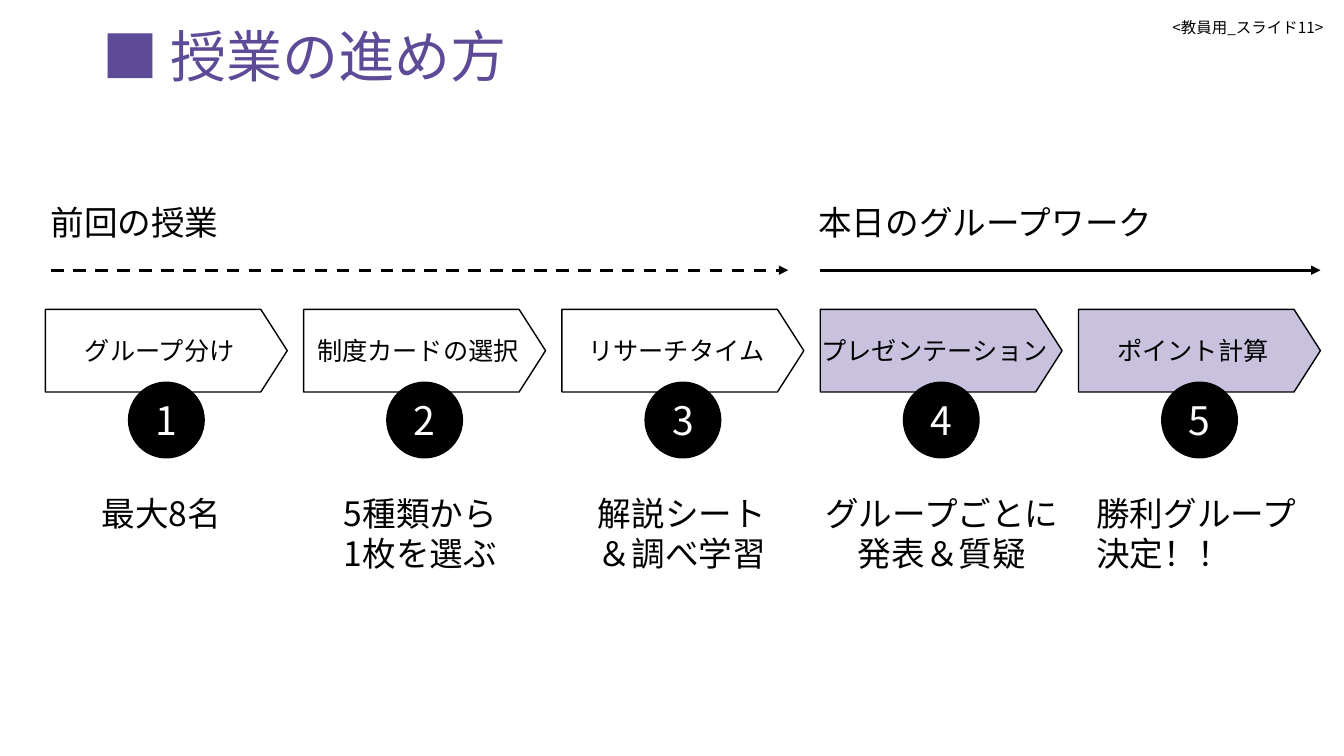
from lxml.etree import SubElement
from pptx import Presentation
from pptx.dml.color import RGBColor
from pptx.enum.dml import MSO_LINE
from pptx.enum.shapes import MSO_CONNECTOR, MSO_SHAPE
from pptx.enum.text import MSO_ANCHOR, MSO_AUTO_SIZE, PP_ALIGN
from pptx.oxml.ns import qn
from pptx.util import Pt

BLACK = RGBColor(0x00, 0x00, 0x00)
WHITE = RGBColor(0xFF, 0xFF, 0xFF)
PURPLE = RGBColor(0x5E, 0x4B, 0x97)
LILAC = RGBColor(0xC9, 0xC2, 0xDE)

FIRST_LEFT, STEP_PITCH = 32.4, 184.5
STEP_WIDTH, STEP_HEIGHT, STEP_TOP = 172.8, 59, 221
BADGE_SIZE, BADGE_TOP = 54, 273
NOTE_TOP, HEADING_TOP, TIMELINE_TOP = 348.5, 141, 193

STEPS = [
    ("グループ分け", WHITE),
    ("制度カードの選択", WHITE),
    ("リサーチタイム", WHITE),
    ("プレゼンテーション", LILAC),
    ("ポイント計算", LILAC),
]
NOTES = [
    (65.5, 106, ["最大8名"], PP_ALIGN.LEFT),
    (238.5, 129.5, ["5種類から", "1枚を選ぶ"], PP_ALIGN.LEFT),
    (420, 135.5, ["解説シート", "＆調べ学習"], PP_ALIGN.LEFT),
    (580.5, 184.5, ["グループごとに", "発表＆質疑"], PP_ALIGN.CENTER),
    (776, 160, ["勝利グループ", "決定！！"], PP_ALIGN.LEFT),
]
PHASES = [
    ("前回の授業", 29, 135.5, 36.7, 563, MSO_LINE.DASH),
    ("本日のグループワーク", 577.5, 257, 586, 943.2, MSO_LINE.SOLID),
]


class LessonPage:
    """Holds the font and the page, and draws each kind of element on it."""

    def __init__(self, page, font_name):
        self.page = page
        self.font_name = font_name

    def set_text(self, frame, lines, size, color, align, spacing=None):
        for index, line in enumerate(lines):
            para = frame.add_paragraph() if index else frame.paragraphs[0]
            para.text = line
            para.alignment = align
            para.line_spacing = spacing
            para.font.size = Pt(size)
            para.font.color.rgb = color
            para.font.name = self.font_name
            defaults = para._p.pPr.find(qn("a:defRPr"))
            SubElement(defaults, qn("a:ea"), typeface=self.font_name)

    def title(self, text):
        box = self.page.shapes.title
        box.left, box.top, box.width, box.height = Pt(66), Pt(0), Pt(828), Pt(85)
        box.text_frame.vertical_anchor = MSO_ANCHOR.MIDDLE
        self.set_text(box.text_frame, [text], 40, PURPLE, PP_ALIGN.LEFT, 0.9)

    def label(self, left, top, width, height, lines, size=24,
              align=PP_ALIGN.LEFT, wrap=False, spacing=None):
        box = self.page.shapes.add_textbox(Pt(left), Pt(top), Pt(width), Pt(height))
        frame = box.text_frame
        frame.word_wrap = wrap
        frame.auto_size = MSO_AUTO_SIZE.NONE if wrap else MSO_AUTO_SIZE.SHAPE_TO_FIT_TEXT
        self.set_text(frame, lines, size, BLACK, align, spacing)

    def shape(self, kind, left, top, width, height, fill, text, size, color):
        shape = self.page.shapes.add_shape(kind, Pt(left), Pt(top), Pt(width), Pt(height))
        shape.shadow.inherit = False
        shape.fill.solid()
        shape.fill.fore_color.rgb = fill
        shape.line.color.rgb = BLACK
        shape.line.width = Pt(1)
        shape.text_frame.vertical_anchor = MSO_ANCHOR.MIDDLE
        self.set_text(shape.text_frame, [text], size, color, PP_ALIGN.CENTER)
        return shape

    def step(self, left, text, fill):
        arrow = self.shape(MSO_SHAPE.PENTAGON, left, STEP_TOP, STEP_WIDTH,
                           STEP_HEIGHT, fill, text, 18, BLACK)
        arrow.adjustments[0] = 0.32
        arrow.text_frame.margin_left = arrow.text_frame.margin_right = Pt(0)

    def badge(self, left, number):
        self.shape(MSO_SHAPE.OVAL, left, BADGE_TOP, BADGE_SIZE, BADGE_SIZE,
                   BLACK, str(number), 28, WHITE)

    def timeline(self, start, end, dash):
        arrow = self.page.shapes.add_connector(
            MSO_CONNECTOR.STRAIGHT, Pt(start), Pt(TIMELINE_TOP), Pt(end), Pt(TIMELINE_TOP))
        arrow.line.color.rgb = BLACK
        arrow.line.width = Pt(2.25)
        arrow.line.dash_style = dash
        properties = arrow._element.spPr
        SubElement(properties.find(qn("a:ln")), qn("a:tailEnd"), type="triangle")
        SubElement(properties, qn("a:effectLst"))


def main():
    deck = Presentation()
    deck.slide_width, deck.slide_height = Pt(960), Pt(540)
    lesson = LessonPage(deck.slides.add_slide(deck.slide_layouts[5]), "Noto Sans CJK JP")

    lesson.title("■ 授業の進め方")
    lesson.label(720, 10.8, 232.5, 18.7, ["<教員用_スライド11>"], 11,
                 PP_ALIGN.RIGHT, wrap=True, spacing=0.9)

    for index, (text, fill) in enumerate(STEPS):
        left = FIRST_LEFT + index * STEP_PITCH
        lesson.step(left, text, fill)
        lesson.badge(left + (STEP_WIDTH - BADGE_SIZE) / 2, index + 1)

    for heading, left, width, start, end, dash in PHASES:
        lesson.label(left, HEADING_TOP, width, 36, [heading])
        lesson.timeline(start, end, dash)

    for left, width, lines, align in NOTES:
        lesson.label(left, NOTE_TOP, width, 36 * len(lines), lines, align=align,
                     wrap=len(lines) == 1)

    deck.save("out.pptx")


if __name__ == "__main__":
    main()
